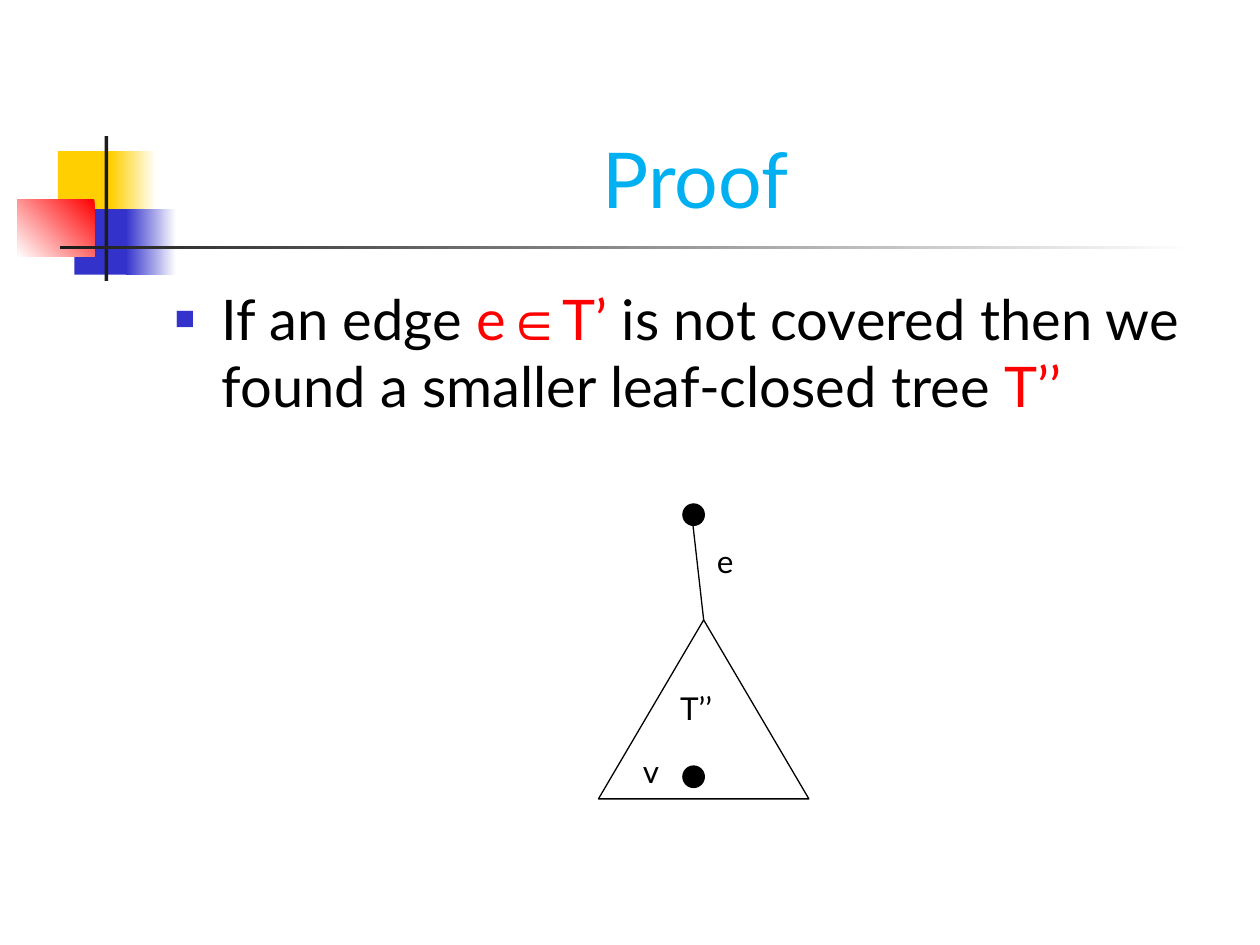
from dataclasses import dataclass
from typing import Optional

from lxml.etree import SubElement
from pptx import Presentation
from pptx.dml.color import RGBColor
from pptx.enum.shapes import MSO_CONNECTOR, MSO_SHAPE as Preset
from pptx.enum.text import MSO_ANCHOR, MSO_AUTO_SIZE, PP_ALIGN
from pptx.oxml.ns import qn
from pptx.util import Inches, Pt

COLORS = {
    "white": "FFFFFF", "black": "000000", "yellow": "FFCF01", "blue": "3333CC",
    "red": "FF0000", "charcoal": "1C1C1C", "title": "00B0F0",
}
FONT = "Lato"
NODE_SIZE = 0.17


@dataclass
class Block:
    left: float
    top: float
    width: float
    height: float
    color: str
    fade_to: Optional[str] = None
    angle: int = 180


@dataclass
class Span:
    text: str
    color: str = "black"
    font: str = FONT


@dataclass
class Label:
    text: str
    left: float
    top: float
    width: float


BLOCKS = [
    Block(0.46, 1.2, 0.48, 0.52, "yellow"),
    Block(0.88, 1.2, 0.36, 0.52, "white", "yellow"),
    Block(0.59, 1.66, 0.46, 0.52, "blue"),
    Block(1, 1.66, 0.4, 0.52, "white", "blue"),
    Block(0.14, 1.58, 0.61, 0.46, "red", "white", 225),
    Block(0.83, 1.08, 0.03, 1.15, "charcoal"),
    Block(0.48, 1.95, 9, 0.03, "white", "charcoal"),
]
CLAIM = [
    Span("If an edge "),
    Span("e", "red"),
    Span("∈", "red", "Arial"),
    Span("T’", "red"),
    Span(" is not covered then we found a smaller leaf-closed tree "),
    Span("T’’", "red"),
]
NODES = [(5.42, 6.08), (5.42, 4)]
LABELS = [
    Label("v", 5, 5.92, 0.33),
    Label("e", 5.57, 4.25, 0.35),
    Label("T’’", 5.17, 5.42, 0.58),
]


def rgb(name: str) -> RGBColor:
    """Return the named colour."""
    return RGBColor.from_string(COLORS[name])


def add_block(page, block: Block) -> None:
    """Draw a borderless rectangle, plain or with a gradient."""
    place = map(Inches, (block.left, block.top, block.width, block.height))
    shape = page.shapes.add_shape(Preset.RECTANGLE, *place)
    shape.shadow.inherit = False
    shape.line.fill.background()
    if block.fade_to is None:
        shape.fill.solid()
        shape.fill.fore_color.rgb = rgb(block.color)
        return
    shape.fill.gradient()
    shape.fill.gradient_angle = block.angle
    for stop, name in zip(shape.fill.gradient_stops, (block.color, block.fade_to)):
        stop.color.rgb = rgb(name)


def add_outlined(page, preset: Preset, left: float, top: float,
                 width: float, height: float, fill: Optional[str] = None):
    """Draw a shape with a thin black outline."""
    shape = page.shapes.add_shape(preset, *map(Inches, (left, top, width, height)))
    shape.shadow.inherit = False
    shape.line.color.rgb = rgb("black")
    shape.line.width = Pt(0.75)
    if fill:
        shape.fill.solid()
        shape.fill.fore_color.rgb = rgb(fill)
    else:
        shape.fill.background()
    return shape


def add_text(page, spans: list[Span], size: float, left: float, top: float,
             width: float, height: float, align: PP_ALIGN, before: float = 0):
    """Add a wrapped text box of one paragraph."""
    box = page.shapes.add_textbox(*map(Inches, (left, top, width, height)))
    box.text_frame.word_wrap = True
    para = box.text_frame.paragraphs[0]
    para.alignment = align
    para.space_before = Pt(before)
    for span in spans:
        run = para.add_run()
        run.text = span.text
        run.font.name = span.font
        run.font.size = Pt(size)
        run.font.color.rgb = rgb(span.color)
    return box


def add_bullet(para) -> None:
    """Give a paragraph a hanging blue square bullet."""
    properties = para._p.get_or_add_pPr()
    properties.set("marL", str(Inches(0.37)))
    properties.set("indent", str(Inches(-0.37)))
    color = SubElement(properties, qn("a:buClr"))
    SubElement(color, qn("a:srgbClr"), val=COLORS["blue"])
    SubElement(properties, qn("a:buSzPct"), val="60000")
    SubElement(properties, qn("a:buFont"), typeface="Arial")
    SubElement(properties, qn("a:buChar"), char="■")


def add_edge(page, triangle) -> None:
    """Join the upper node to the top of the triangle."""
    ends = map(Inches, (5.5, 4.17, 5.58, 4.92))
    edge = page.shapes.add_connector(MSO_CONNECTOR.STRAIGHT, *ends)
    edge.end_connect(triangle, 0)
    edge.line.color.rgb = rgb("black")
    edge.line.width = Pt(0.75)
    SubElement(edge._element.spPr, qn("a:effectLst"))


def main() -> None:
    """Build and save the proof slide."""
    deck = Presentation()
    deck.slide_width, deck.slide_height = Inches(10), Inches(7.5)
    page = deck.slides.add_slide(deck.slide_layouts[6])
    for block in BLOCKS:
        add_block(page, block)

    title = add_text(page, [Span("Proof", "title")], 44, 1.26, 0.23, 8.52, 1.6, PP_ALIGN.CENTER)
    title.text_frame.vertical_anchor = MSO_ANCHOR.BOTTOM
    claim = add_text(page, CLAIM, 32, 1.29, 2.21, 8.5, 4.5, PP_ALIGN.LEFT, 8)
    add_bullet(claim.text_frame.paragraphs[0])

    triangle = add_outlined(page, Preset.ISOSCELES_TRIANGLE, 4.75, 4.92, 1.67, 1.42)
    for left, top in NODES:
        add_outlined(page, Preset.OVAL, left, top, NODE_SIZE, NODE_SIZE, "black")
    add_edge(page, triangle)
    for label in LABELS:
        box = add_text(page, [Span(label.text)], 18, label.left, label.top,
                       label.width, 0.4, PP_ALIGN.RIGHT, 11.2)
        box.text_frame.auto_size = MSO_AUTO_SIZE.SHAPE_TO_FIT_TEXT

    deck.save("out.pptx")


if __name__ == "__main__":
    main()
